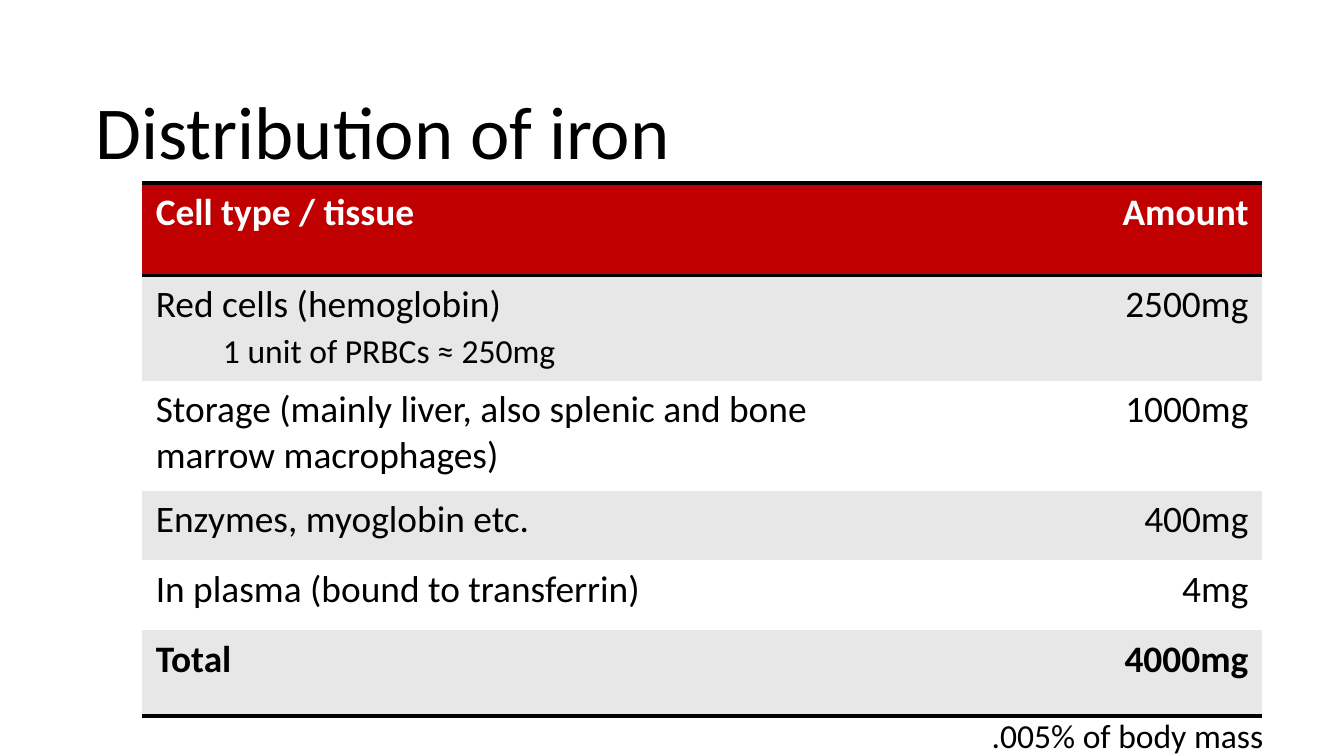
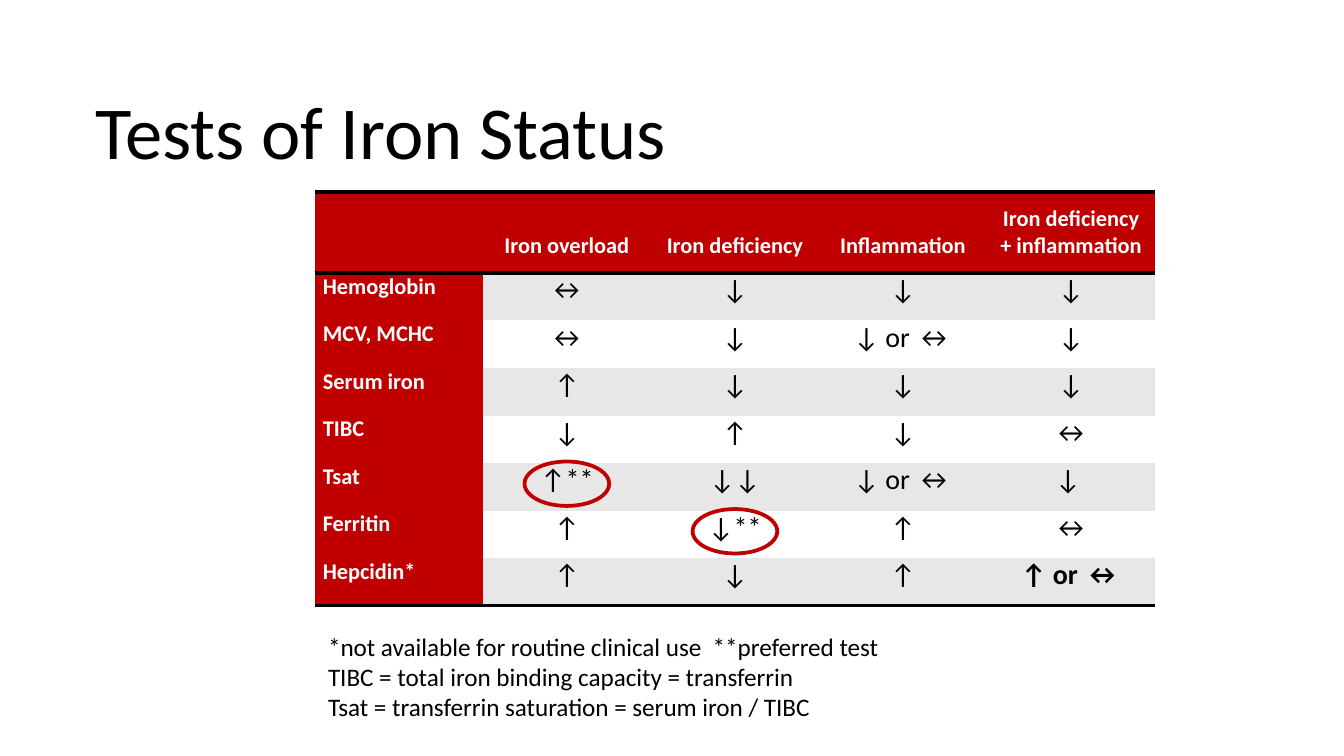
from dataclasses import dataclass

from lxml import etree
from pptx import Presentation
from pptx import util as u
from pptx.dml.color import RGBColor
from pptx.enum import shapes, text
from pptx.oxml import ns

Cm, Pt = u.Cm, u.Pt
LEFT, CENTER, RIGHT, JUSTIFY = (
    text.PP_ALIGN.LEFT, text.PP_ALIGN.CENTER, text.PP_ALIGN.RIGHT, text.PP_ALIGN.JUSTIFY)
NO_GRID_STYLE = "{2D5ABB26-0587-4C30-8999-92F81FD0307C}"


@dataclass(frozen=True)
class Theme:
    font: str = "Calibri"
    red: str = "C00000"
    band: str = "E7E7E7"
    white: str = "FFFFFF"
    black: str = "000000"
    title: float = 40
    body: float = 20
    small: float = 18
    arrow: float = 15
    note: float = 13.5
    label: float = 12
    rule: float = 2


THEME = Theme()


@dataclass(frozen=True)
class Box:
    left: float
    top: float
    width: float
    height: float

    def lengths(self):
        return [Cm(value) for value in (self.left, self.top, self.width, self.height)]


TITLE_BOX = Box(1.55, 1.26, 22.86, 2.39)


def rgb(colour):
    return RGBColor.from_string(colour)


def add_run(paragraph, words, size, colour=THEME.black, bold=False):
    run = paragraph.add_run()
    run.text = words
    run.font.name = THEME.font
    run.font.size = Pt(size)
    run.font.bold = bold
    run.font.color.rgb = rgb(colour)


def add_titled_slide(presentation, title):
    slide = presentation.slides.add_slide(presentation.slide_layouts[5])
    shape = slide.shapes.title
    shape.left, shape.top, shape.width, shape.height = TITLE_BOX.lengths()
    frame = shape.text_frame
    frame.vertical_anchor = text.MSO_ANCHOR.MIDDLE
    frame.paragraphs[0].alignment = LEFT
    add_run(frame.paragraphs[0], title, THEME.title)
    return slide


def add_note(slide, box, lines, size, alignment=LEFT):
    frame = slide.shapes.add_textbox(*box.lengths()).text_frame
    frame.word_wrap = False
    frame.auto_size = text.MSO_AUTO_SIZE.SHAPE_TO_FIT_TEXT
    for index, line in enumerate(lines):
        paragraph = frame.paragraphs[0] if index == 0 else frame.add_paragraph()
        paragraph.alignment = alignment
        add_run(paragraph, line, size)


def add_rule(cell, side):
    """Draw the black rule on one side of a cell: "T" or "B"."""
    properties = cell._tc.get_or_add_tcPr()
    line = etree.SubElement(properties, ns.qn(f"a:ln{side}"), w=str(Pt(THEME.rule)))
    fill = etree.SubElement(line, ns.qn("a:solidFill"))
    etree.SubElement(fill, ns.qn("a:srgbClr"), val=THEME.black)


def add_ruled_table(slide, box, widths, heights, label_column=False):
    """Add a table with a red header, grey bands and three black rules."""
    shape = slide.shapes.add_table(len(heights), len(widths), *box.lengths())
    shape.element.find(f".//{ns.qn('a:tableStyleId')}").text = NO_GRID_STYLE
    table = shape.table
    for column, width in zip(table.columns, widths):
        column.width = Cm(width)
    last = len(heights) - 1
    for row, height in enumerate(heights):
        table.rows[row].height = Cm(height)
        for column in range(len(widths)):
            cell = table.cell(row, column)
            if row == 0:
                add_rule(cell, "T")
            if row in (0, last):
                add_rule(cell, "B")
            is_red = row == 0 or (label_column and column == 0)
            colour = THEME.red if is_red else THEME.band if row % 2 else THEME.white
            cell.fill.solid()
            cell.fill.fore_color.rgb = rgb(colour)
    return table


def add_tabbed_line(cell, words, stop):
    paragraph = cell.text_frame.add_paragraph()
    tabs = etree.SubElement(paragraph._p.get_or_add_pPr(), ns.qn("a:tabLst"))
    etree.SubElement(tabs, ns.qn("a:tab"), pos=str(Cm(stop)), algn="l")
    add_run(paragraph, "\t", THEME.body)
    add_run(paragraph, words, THEME.small)


def add_amounts(slide, box):
    rows = [
        ("Cell type / tissue", "Amount"),
        ("Red cells (hemoglobin)", "2500mg"),
        ("Storage (mainly liver, also splenic and bone marrow macrophages)", "1000mg"),
        ("Enzymes, myoglobin etc.", "400mg"),
        ("In plasma (bound to transferrin)", "4mg"),
        ("Total", "4000mg"),
    ]
    amount_width = 6.85
    table = add_ruled_table(slide, box, [box.width - amount_width, amount_width],
                            [1.75, 1.98, 2.08, 1.32, 1.32, 1.62])
    for row, values in enumerate(rows):
        for column, (words, alignment) in enumerate(zip(values, (LEFT, RIGHT))):
            paragraph = table.cell(row, column).text_frame.paragraphs[0]
            paragraph.alignment = alignment
            add_run(paragraph, words, THEME.body,
                    THEME.black if row else THEME.white, row in (0, len(rows) - 1))
    add_tabbed_line(table.cell(1, 0), "1 unit of PRBCs ≈ 250mg", 1.27)


def add_preferred_mark(slide, center, top):
    width, height = 1.6, 0.84
    shape = slide.shapes.add_shape(
        shapes.MSO_SHAPE.OVAL, *Box(center - width / 2, top, width, height).lengths())
    shape.shadow.inherit = False
    shape.fill.background()
    shape.line.color.rgb = rgb(THEME.red)
    shape.line.width = Pt(THEME.rule)


def add_tests(slide, box):
    rows = [
        ("", "Iron overload", "Iron deficiency", "Inflammation",
         "Iron deficiency + inflammation"),
        ("Hemoglobin", "↔", "↓", "↓", "↓"),
        ("MCV, MCHC", "↔", "↓", "↓ or ↔", "↓"),
        ("Serum iron", "↑", "↓", "↓", "↓"),
        ("TIBC", "↓", "↑", "↓", "↔"),
        ("Tsat", "↑**", "↓↓", "↓ or ↔", "↓ "),
        ("Ferritin", "↑", "↓**", "↑", "↔"),
        ("Hepcidin*", "↑", "↓", "↑", "↑ or ↔"),
    ]
    header_height = 1.53
    row_height = (box.height - header_height) / (len(rows) - 1)
    column_width = box.width / len(rows[0])
    table = add_ruled_table(slide, box, [column_width] * len(rows[0]),
                            [header_height] + [row_height] * (len(rows) - 1),
                            label_column=True)
    for row, values in enumerate(rows):
        for column, words in enumerate(values):
            if not words:
                continue
            cell = table.cell(row, column)
            cell.margin_left = cell.margin_right = Cm(0.15)
            cell.margin_top = cell.margin_bottom = 0
            if row == 0:
                cell.vertical_anchor = text.MSO_ANCHOR.BOTTOM
                cell.margin_bottom = Cm(0.25)
            paragraph = cell.text_frame.paragraphs[0]
            paragraph.alignment = CENTER if column else JUSTIFY
            if row == 0 or column == 0:
                add_run(paragraph, words, THEME.label, THEME.white, True)
            else:
                add_run(paragraph, words, THEME.arrow, bold=words == "↑ or ↔")
            if words.endswith("**"):
                add_preferred_mark(slide, box.left + (column + 0.5) * column_width,
                                   box.top + header_height + (row - 1) * row_height - 0.03)


def build_distribution(presentation):
    slide = add_titled_slide(presentation, "Distribution of iron")
    add_amounts(slide, Box(2.69, 3.46, 21.16, 10.07))
    add_note(slide, Box(18.03, 13.39, 6.1, 1.02), [".005% of body mass"],
             THEME.small, RIGHT)


def build_tests(presentation):
    slide = add_titled_slide(presentation, "Tests of Iron Status")
    add_tests(slide, Box(5.95, 3.63, 15.88, 7.82))
    add_note(slide, Box(5.95, 11.81, 11.1, 1.98), [
        "*not available for routine clinical use  **preferred test",
        "TIBC = total iron binding capacity = transferrin",
        "Tsat = transferrin saturation = serum iron / TIBC",
    ], THEME.note)


def main():
    presentation = Presentation()
    presentation.slide_width, presentation.slide_height = Cm(25.4), Cm(14.29)
    build_distribution(presentation)
    build_tests(presentation)
    presentation.save("out.pptx")


if __name__ == "__main__":
    main()
